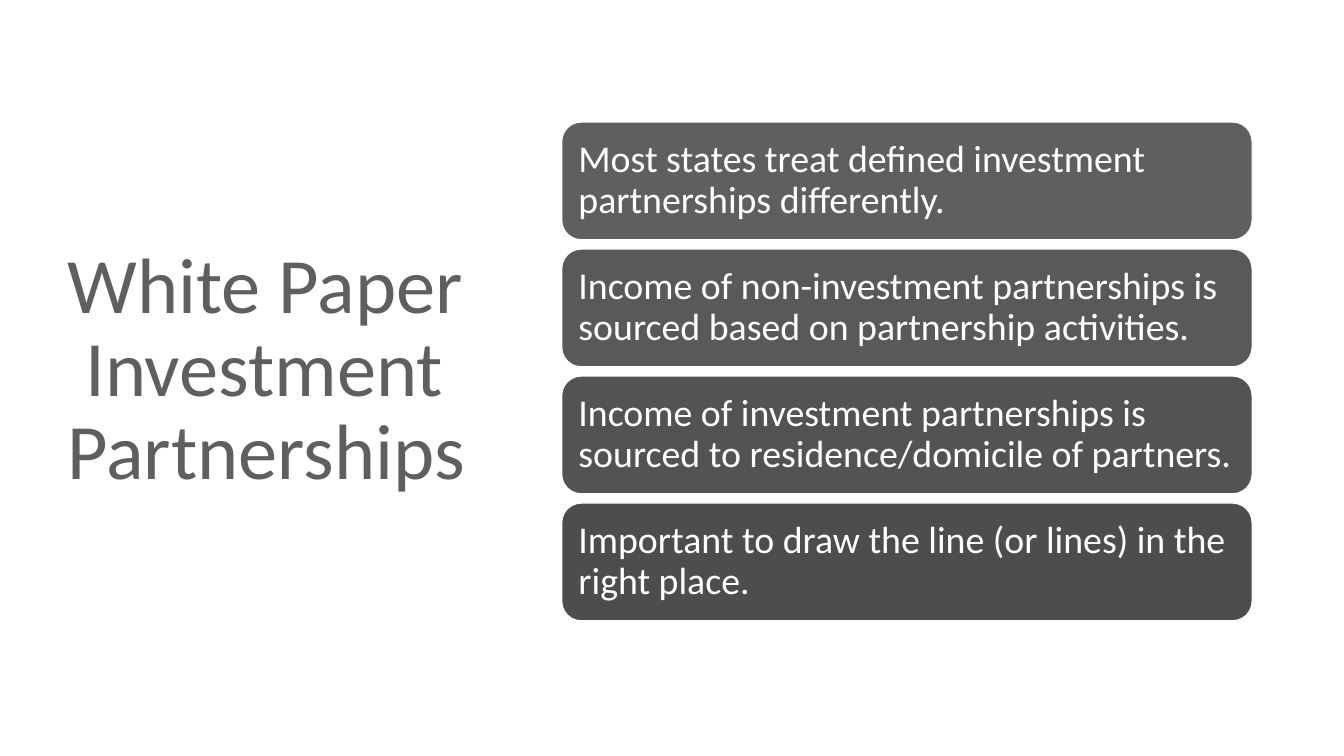
from pptx import Presentation
from pptx.dml.color import RGBColor
from pptx.enum import shapes, text
from pptx.util import Inches, Pt

WHITE = RGBColor(0xFF, 0xFF, 0xFF)
GREY = RGBColor(0x5F, 0x5F, 0x5F)
FONT = "Calibri"

# Each statement with the fill of its bar, getting darker downwards
STATEMENTS = [
    ("Most states treat defined investment partnerships differently.", GREY),
    ("Income of non-investment partnerships is sourced based on partnership activities.",
     RGBColor(0x59, 0x59, 0x59)),
    ("Income of investment partnerships is sourced to residence/domicile of partners.",
     RGBColor(0x53, 0x53, 0x53)),
    ("Important to draw the line (or lines) in the right place.",
     RGBColor(0x4D, 0x4D, 0x4D)),
]

# Column of bars, in inches
BAR_LEFT, BAR_TOP, BAR_WIDTH, BAR_HEIGHT = 5.57, 1.21, 6.85, 1.17
BAR_PITCH = 1.26


def apply_format(target, values):
    for name, value in values.items():
        setattr(target, name, value)


def write_text(shape, wording, size, color, line_spacing, side_margins):
    frame = shape.text_frame
    frame.text = wording
    left, right = side_margins
    apply_format(frame, {
        "word_wrap": True,
        "auto_size": text.MSO_AUTO_SIZE.NONE,
        "vertical_anchor": text.MSO_ANCHOR.MIDDLE,
        "margin_left": Inches(left),
        "margin_right": Inches(right),
    })
    paragraph = frame.paragraphs[0]
    apply_format(paragraph, {
        "alignment": text.PP_ALIGN.LEFT,
        "line_spacing": line_spacing,
    })
    font = paragraph.runs[0].font
    apply_format(font, {"name": FONT, "size": Pt(size)})
    font.color.rgb = color


def add_title(slide):
    title = slide.shapes.title
    apply_format(title, {
        "left": Inches(0.57), "top": Inches(0.68),
        "width": Inches(4.16), "height": Inches(6.02),
    })
    write_text(title, "White Paper  Investment Partnerships", 56, GREY,
               0.88, (0.1, 0.05))


def add_bar(slide, row, wording, fill):
    bar = slide.shapes.add_shape(
        shapes.MSO_SHAPE.ROUNDED_RECTANGLE,
        Inches(BAR_LEFT), Inches(BAR_TOP + row * BAR_PITCH),
        Inches(BAR_WIDTH), Inches(BAR_HEIGHT))
    bar.shadow.inherit = False
    bar.fill.solid()
    bar.fill.fore_color.rgb = fill
    bar.line.color.rgb = WHITE
    bar.line.width = Pt(1)
    # The rounded corners already inset the text a little
    write_text(bar, wording, 27, WHITE, 0.9, (0.11, 0.08))


def main():
    presentation = Presentation()
    presentation.slide_width = Inches(13.33)
    presentation.slide_height = Inches(7.5)
    title_only = presentation.slide_layouts[5]
    slide = presentation.slides.add_slide(title_only)

    add_title(slide)
    for row, (wording, fill) in enumerate(STATEMENTS):
        add_bar(slide, row, wording, fill)

    presentation.save("out.pptx")


if __name__ == "__main__":
    main()
